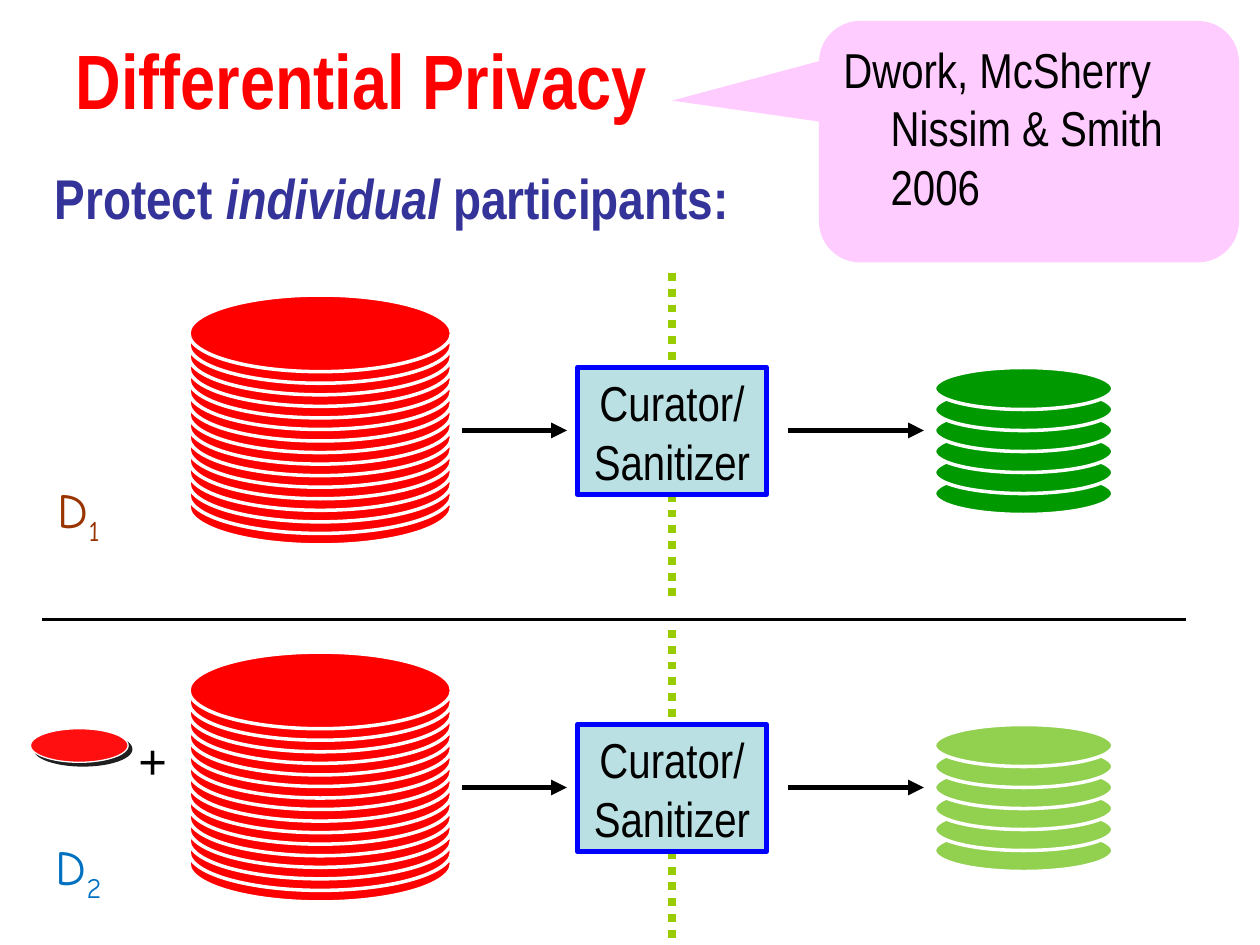
from lxml.etree import SubElement
from pptx import Presentation
from pptx.dml.color import RGBColor
from pptx.enum.dml import MSO_LINE
from pptx.enum.shapes import MSO_CONNECTOR, MSO_SHAPE
from pptx.enum.text import MSO_ANCHOR as Anchor, MSO_AUTO_SIZE as AutoSize, PP_ALIGN as Align
from pptx.oxml.ns import qn
from pptx.util import Emu, Pt

PX = 7620
ROW_PITCH = 340
HANGING = 45


def px(length):
    return Emu(length * PX)


def color(value):
    return RGBColor.from_string(value)


class Deck:
    font = "Arial Narrow"
    size = 28
    ink = "000000"

    def __init__(self, width, height):
        self.file = Presentation()
        self.file.slide_width, self.file.slide_height = px(width), px(height)
        self.slide = self.file.slides.add_slide(self.file.slide_layouts[1])

    def paragraph(self, paragraph, runs, align=Align.LEFT, hanging=0,
                  font=None, size=None, ink=None, bold=False):
        props = paragraph._p.get_or_add_pPr()
        props.set("marL", str(px(hanging)))
        props.set("indent", str(px(-hanging)))
        paragraph.alignment = align
        paragraph.space_before = Pt(0)
        SubElement(props, qn("a:buNone"))
        paragraph.font.name = font or self.font
        paragraph.font.size = Pt(size or self.size)
        paragraph.font.color.rgb = color(ink or self.ink)
        paragraph.font.bold = bold
        for text in runs:
            paragraph.add_run().text = text
        return paragraph

    def placeholder(self, holder, box, anchor, runs, **style):
        holder.left, holder.top, holder.width, holder.height = map(px, box)
        frame = holder.text_frame
        frame.auto_size = AutoSize.NONE
        frame.vertical_anchor = anchor
        return self.paragraph(frame.paragraphs[0], runs, bold=True, **style)

    def shape(self, kind, box, fill, line=None, weight=2, parent=None):
        shape = (parent or self.slide).shapes.add_shape(kind, *map(px, box))
        shape.shadow.inherit = False
        shape.fill.solid()
        shape.fill.fore_color.rgb = color(fill)
        if line:
            shape.line.color.rgb = color(line)
            shape.line.width = Pt(weight)
        else:
            shape.line.fill.background()
        return shape

    def stack(self, left, top, width, height, count, step, fill):
        group = self.slide.shapes.add_group_shape()
        for level in reversed(range(count)):
            self.shape(MSO_SHAPE.OVAL, (left, top + level * step, width, height),
                       fill, "FFFFFF", parent=group)

    def line(self, start, end, ink="000000", weight=3.0, dash=None, arrow=False):
        line = self.slide.shapes.add_connector(
            MSO_CONNECTOR.STRAIGHT, *map(px, start + end))
        line.line.color.rgb = color(ink)
        line.line.width = Pt(weight)
        if dash:
            line.line.dash_style = dash
        if arrow:
            SubElement(line.line._get_or_add_ln(), qn("a:tailEnd"), type="triangle")
        SubElement(line._element.spPr, qn("a:effectLst"))

    def process(self, box, words):
        frame = self.shape(MSO_SHAPE.RECTANGLE, box, "BBE0E3", "0000FF", 3).text_frame
        frame.word_wrap = False
        frame.vertical_anchor = Anchor.MIDDLE
        for index, word in enumerate(words):
            target = frame.add_paragraph() if index else frame.paragraphs[0]
            self.paragraph(target, [word], Align.CENTER, HANGING)

    def label(self, box, runs, **style):
        frame = self.slide.shapes.add_textbox(*map(px, box)).text_frame
        frame.word_wrap = True
        frame.auto_size = AutoSize.SHAPE_TO_FIT_TEXT
        return self.paragraph(frame.paragraphs[0], runs, Align.CENTER, **style)

    def callout(self, box, tip, text):
        bubble = self.shape(MSO_SHAPE.ROUNDED_RECTANGULAR_CALLOUT, box, "FFCCFF")
        for index, value in enumerate(tip):
            bubble.adjustments[index] = value
        frame = bubble.text_frame
        frame.word_wrap = True
        frame.vertical_anchor = Anchor.TOP
        self.paragraph(frame.paragraphs[0], [text], hanging=HANGING)

    def record(self, box):
        disk = self.shape(MSO_SHAPE.OVAL, box, "FF0F0F", "FFFFFF", 0.75)
        effects = disk._element.spPr.find(qn("a:effectLst"))
        shadow = SubElement(effects, qn("a:outerShdw"), blurRad="0", dist="38100",
                            dir="2700000", algn="tl", rotWithShape="0")
        tint = SubElement(shadow, qn("a:srgbClr"), val="000000")
        SubElement(tint, qn("a:alpha"), val="87000")

    def pipeline(self, offset, number, label_ink, output_fill):
        self.stack(890, 350 + offset, 170, 40, 6, 20, output_fill)
        self.line((640, 260 + offset), (640, 570 + offset), "99CC00", 4.5,
                  MSO_LINE.ROUND_DOT)
        self.stack(180, 281 + offset, 250, 73, 16, 11, "FF0000")
        for start, end in ((440, 540), (750, 880)):
            self.line((start, 410 + offset), (end, 410 + offset), arrow=True)
        self.process((550, 350 + offset, 180, 121), ("Curator/", "Sanitizer"))
        dataset = self.label((0, 451 + offset, 150, 68), ["D", number],
                             font="Comic Neue", ink=label_ink)
        dataset.runs[1]._r.get_or_add_rPr().set("baseline", "-25000")


def main():
    deck = Deck(1200, 900)
    title, body = deck.slide.placeholders
    deck.placeholder(title, (60, 0, 1080, 150), Anchor.MIDDLE,
                     ["Differential Privacy"], size=44, ink="FF0000")
    promise = deck.placeholder(body, (40, 150, 1130, 690), Anchor.TOP,
                               ["Protect ", "individual ", "participants:"],
                               size=32, ink="333399", hanging=HANGING)
    promise.runs[1].font.italic = True

    rows = (("1", "993300", "009900"), ("2", "0070C0", "92D050"))
    for index, row in enumerate(rows):
        deck.pipeline(index * ROW_PITCH, *row)
    deck.line((40, 590), (1130, 590), weight=2.25)

    deck.record((29, 694, 93, 32))
    deck.label((120, 690, 50, 77), ["+"], font="Arial")
    deck.callout((780, 20, 400, 230), (-0.85, -0.17, 0.17),
                 "Dwork, McSherry Nissim & Smith 2006")
    deck.file.save("out.pptx")


if __name__ == "__main__":
    main()
